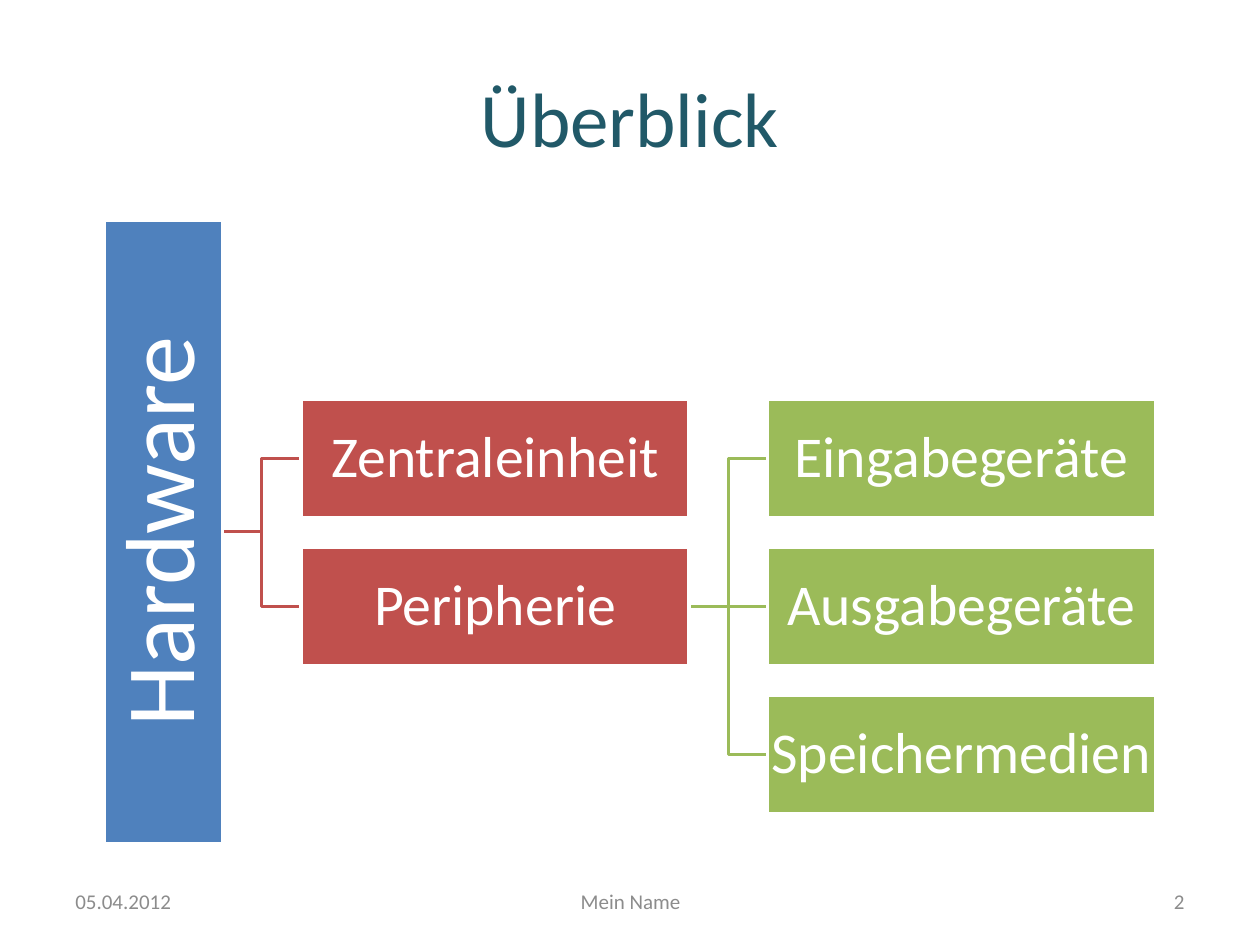
"""Build the hardware overview slide with its hierarchy diagram."""
from dataclasses import dataclass

from lxml import etree
from pptx import Presentation
from pptx import util as u
from pptx.dml.color import RGBColor
from pptx.enum import shapes, text
from pptx.oxml.ns import qn

TEAL = RGBColor(0x21, 0x59, 0x68)
BLUE = RGBColor(0x4F, 0x81, 0xBD)
RED = RGBColor(0xC0, 0x50, 0x4D)
GREEN = RGBColor(0x9B, 0xBB, 0x59)
WHITE = RGBColor(0xFF, 0xFF, 0xFF)
GRAY = RGBColor(0x8C, 0x8C, 0x8C)

BOX_WIDTH, BOX_HEIGHT, ROOT_LENGTH = 3.08, 0.94, 4.95
COLUMNS = (2.39, 6.09)
ROW_TOP, ROW_PITCH = 3.17, 1.175
LINE_WIDTH = u.Pt(2)


@dataclass(frozen=True)
class Node:
    label: str
    left: float
    top: float
    color: RGBColor
    width: float = BOX_WIDTH
    rotation: int = 0
    size: int = 33
    inset: float = 0.02

    @property
    def middle(self) -> float:
        return self.top + BOX_HEIGHT / 2

    @property
    def right(self) -> float:
        visible_width = BOX_HEIGHT if self.rotation else self.width
        return self.left + (self.width + visible_width) / 2


@dataclass(frozen=True)
class FooterField:
    label: str
    left: float
    width: float
    alignment: text.PP_ALIGN


FOOTER = (
    FooterField("05.04.2012", 0.5, 2.33, text.PP_ALIGN.LEFT),
    FooterField("Mein Name", 3.42, 3.17, text.PP_ALIGN.CENTER),
    FooterField("2", 7.17, 2.33, text.PP_ALIGN.RIGHT),
)


def make_column(labels: tuple, left: float, color: RGBColor) -> list[Node]:
    return [Node(label, left, ROW_TOP + row * ROW_PITCH, color)
            for row, label in enumerate(labels)]


def write_text(shape, content: str, *, size: int, color: RGBColor,
               alignment=text.PP_ALIGN.CENTER, inset: float | None = None,
               line_spacing: float | None = None) -> None:
    frame = shape.text_frame
    frame.word_wrap = True
    frame.auto_size = text.MSO_AUTO_SIZE.NONE
    frame.vertical_anchor = text.MSO_ANCHOR.MIDDLE
    if inset is not None:
        frame.margin_left = frame.margin_right = u.Inches(inset)
        frame.margin_top = frame.margin_bottom = u.Inches(inset)
    paragraph = frame.paragraphs[0]
    paragraph.text = content
    paragraph.alignment = alignment
    paragraph.line_spacing = line_spacing
    paragraph.font.name = "Calibri"
    paragraph.font.size = u.Pt(size)
    paragraph.font.color.rgb = color


def draw_elbow(slide, parent: Node, child: Node) -> None:
    bend = (parent.right + child.left) / 2
    points = [(u.Inches(x), u.Inches(y)) for x, y in (
        (parent.right, parent.middle), (bend, parent.middle),
        (bend, child.middle), (child.left, child.middle))]
    builder = slide.shapes.build_freeform(*points[0])
    builder.add_line_segments(points[1:], close=False)
    elbow = builder.convert_to_shape()
    elbow.shadow.inherit = False
    elbow.fill.background()
    elbow.line.color.rgb = child.color
    elbow.line.width = LINE_WIDTH


def draw_straight(slide, parent: Node, child: Node):
    connector = slide.shapes.add_connector(
        shapes.MSO_CONNECTOR.STRAIGHT,
        u.Inches(parent.right), u.Inches(parent.middle),
        u.Inches(child.left), u.Inches(child.middle))
    connector.line.color.rgb = child.color
    connector.line.width = LINE_WIDTH
    etree.SubElement(connector._element.spPr, qn("a:effectLst"))
    return connector


def draw_node(slide, node: Node):
    box = slide.shapes.add_shape(
        shapes.MSO_SHAPE.RECTANGLE, u.Inches(node.left), u.Inches(node.top),
        u.Inches(node.width), u.Inches(BOX_HEIGHT))
    box.rotation = node.rotation
    box.shadow.inherit = False
    box.fill.solid()
    box.fill.fore_color.rgb = node.color
    box.line.color.rgb = WHITE
    box.line.width = LINE_WIDTH
    write_text(box, node.label, size=node.size, color=WHITE,
               inset=node.inset, line_spacing=0.9)
    return box


def draw_hierarchy(slide) -> None:
    root = Node("Hardware", -1.18, 3.75, BLUE, ROOT_LENGTH, 270, 56, 0.04)
    units = make_column(("Zentraleinheit", "Peripherie"), COLUMNS[0], RED)
    devices = make_column(("Eingabegeräte", "Ausgabegeräte", "Speichermedien"),
                          COLUMNS[1], GREEN)
    periphery, output = units[1], devices[1]
    for unit in units:
        draw_elbow(slide, root, unit)
    for device in (devices[0], devices[2]):
        draw_elbow(slide, periphery, device)
    connector = draw_straight(slide, periphery, output)

    boxes = {node: draw_node(slide, node) for node in (root, *units, *devices)}
    connector.begin_connect(boxes[periphery], 3)
    connector.end_connect(boxes[output], 1)


def main() -> None:
    presentation = Presentation()
    presentation.slide_width = u.Inches(10)
    presentation.slide_height = u.Inches(7.5)
    slide = presentation.slides.add_slide(presentation.slide_layouts[5])

    title = slide.shapes.title
    title.left, title.top = u.Inches(0.5), u.Inches(0.3)
    title.width, title.height = u.Inches(9), u.Inches(1.25)
    write_text(title, "Überblick", size=44, color=TEAL)

    draw_hierarchy(slide)
    for field in FOOTER:
        box = slide.shapes.add_textbox(u.Inches(field.left), u.Inches(6.95),
                                       u.Inches(field.width), u.Inches(0.4))
        write_text(box, field.label, size=12, color=GRAY,
                   alignment=field.alignment)
    presentation.save("out.pptx")


if __name__ == "__main__":
    main()
